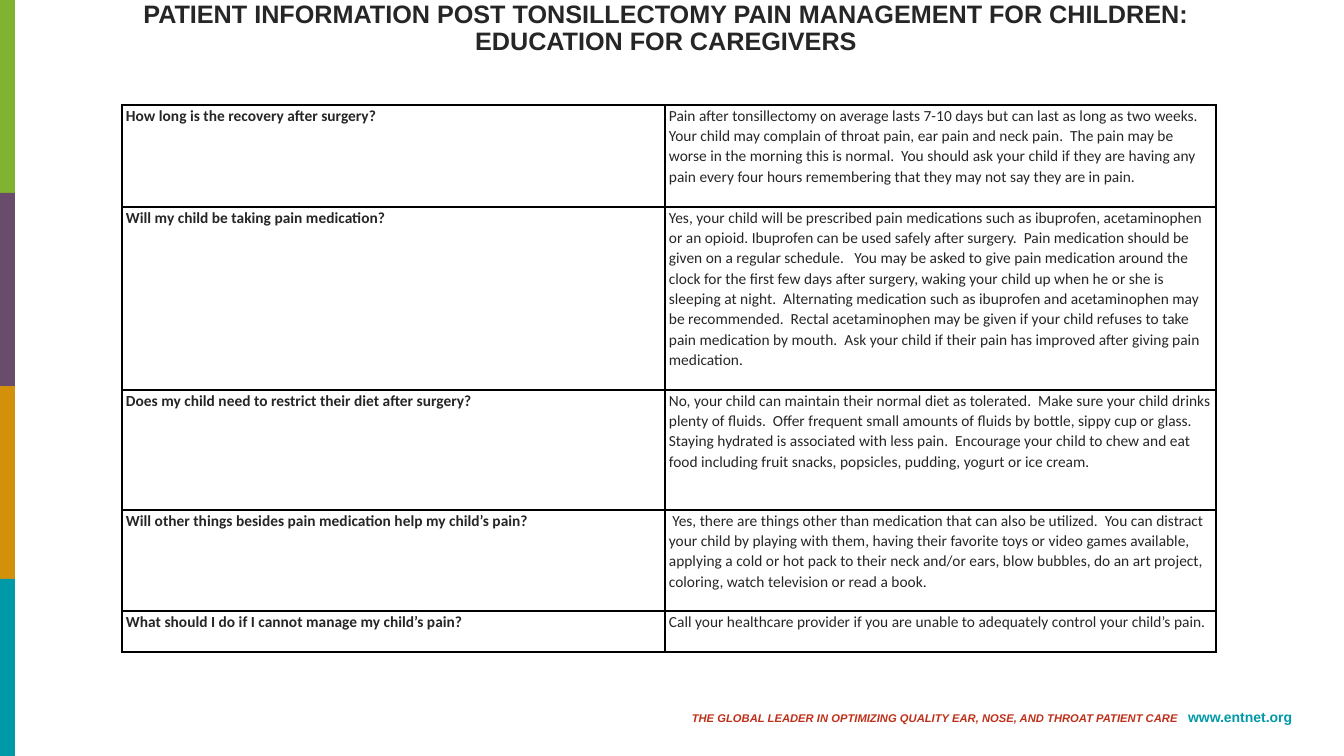
"""Build the slide on pain management after tonsillectomy."""
from dataclasses import dataclass

from lxml.etree import SubElement
from pptx import Presentation
from pptx.dml.color import RGBColor
from pptx.enum.shapes import MSO_SHAPE as Preset
from pptx.enum.text import MSO_ANCHOR as Anchor, PP_ALIGN as Align
from pptx.oxml.ns import qn
from pptx.slide import Slide
from pptx.table import _Cell as Cell
from pptx.text.text import TextFrame, _Paragraph as Paragraph, _Run as Run
from pptx.util import Emu, Pt

COLOURS = {
    "green": "80B330",
    "purple": "694C6B",
    "orange": "D3910B",
    "teal": "0099A8",
    "red": "BF301A",
    "ink": "262626",
    "border": "000000",
}
SLIDE_WIDTH, SLIDE_HEIGHT = 1344, 756
BAR_WIDTH, BAR_HEIGHT, BAR_STEP = 15, 201, 193
TABLE_LEFT, TABLE_TOP = 122, 105
COLUMN_WIDTHS = (543, 551)


@dataclass(frozen=True)
class TextStyle:
    """Format of a run."""

    font: str
    size: int
    colour: str
    bold: bool = False
    italic: bool = False


@dataclass(frozen=True)
class Topic:
    """One question row of the table."""

    height: int
    question: str
    answer: str


TITLE = TextStyle("Arial", 18, "ink", bold=True)
QUESTION = TextStyle("Calibri", 11, "ink", bold=True)
ANSWER = TextStyle("Calibri", 11, "ink")
SLOGAN = TextStyle("Arial", 8, "red", bold=True, italic=True)
ADDRESS = TextStyle("Arial", 10, "teal", bold=True)

TITLE_LINES = (
    "PATIENT INFORMATION POST TONSILLECTOMY PAIN MANAGEMENT FOR CHILDREN:",
    "EDUCATION FOR CAREGIVERS",
)
TOPICS = (
    Topic(
        102,
        "How long is the recovery after surgery?",
        "Pain after tonsillectomy on average lasts 7-10 days but can last as long as two weeks.  "
        "Your child may complain of throat pain, ear pain and neck pain.  The pain may be worse in "
        "the morning this is normal.  You should ask your child if they are having any pain every "
        "four hours remembering that they may not say they are in pain.",
    ),
    Topic(
        183,
        "Will my child be taking pain medication?",
        "Yes, your child will be prescribed pain medications such as ibuprofen, acetaminophen or an "
        "opioid. Ibuprofen can be used safely after surgery.  Pain medication should be given on a "
        "regular schedule.   You may be asked to give pain medication around the clock for the first "
        "few days after surgery, waking your child up when he or she is sleeping at night.  "
        "Alternating medication such as ibuprofen and acetaminophen may be recommended.  Rectal "
        "acetaminophen may be given if your child refuses to take pain medication by mouth.  Ask "
        "your child if their pain has improved after giving pain medication.",
    ),
    Topic(
        120,
        "Does my child need to restrict their diet after surgery?",
        "No, your child can maintain their normal diet as tolerated.  Make sure your child drinks "
        "plenty of fluids.  Offer frequent small amounts of fluids by bottle, sippy cup or glass.  "
        "Staying hydrated is associated with less pain.  Encourage your child to chew and eat food "
        "including fruit snacks, popsicles, pudding, yogurt or ice cream.",
    ),
    Topic(
        101,
        "Will other things besides pain medication help my child’s pain?",
        " Yes, there are things other than medication that can also be utilized.  You can distract "
        "your child by playing with them, having their favorite toys or video games available, "
        "applying a cold or hot pack to their neck and/or ears, blow bubbles, do an art project, "
        "coloring, watch television or read a book.",
    ),
    Topic(
        41,
        "What should I do if I cannot manage my child’s pain?",
        "Call your healthcare provider if you are unable to adequately control your child’s pain.",
    ),
)


def px(length: int) -> Emu:
    """Turn px into EMU."""
    return Emu(round(length * 914400 / 100.8))


def add_run(paragraph: Paragraph, text: str, style: TextStyle) -> Run:
    """Add a styled run."""
    run = paragraph.add_run()
    run.text = text
    formats = {
        "name": style.font,
        "size": Pt(style.size),
        "bold": style.bold,
        "italic": style.italic,
    }
    for name, value in formats.items():
        setattr(run.font, name, value)
    run.font.color.rgb = RGBColor.from_string(COLOURS[style.colour])
    return run


def add_text_frame(slide: Slide, left: int, top: int, width: int, height: int) -> TextFrame:
    """Add a wrapping text box and return its frame."""
    frame = slide.shapes.add_textbox(px(left), px(top), px(width), px(height)).text_frame
    frame.word_wrap = True
    return frame


def draw_bars(slide: Slide) -> None:
    """Draw the coloured bars on the left edge."""
    for index, colour in enumerate(("green", "purple", "orange", "teal")):
        top = index * BAR_STEP
        height = min(BAR_HEIGHT, SLIDE_HEIGHT - top)
        bar = slide.shapes.add_shape(Preset.RECTANGLE, 0, px(top), px(BAR_WIDTH), px(height))
        bar.shadow.inherit = False
        bar.fill.solid()
        bar.fill.fore_color.rgb = RGBColor.from_string(COLOURS[colour])
        bar.line.fill.background()


def draw_title(slide: Slide) -> None:
    """Draw the two-line title."""
    frame = add_text_frame(slide, 90, 0, 1159, 70)
    formats = {"margin_top": px(2), "margin_right": px(17), "vertical_anchor": Anchor.TOP}
    for name, value in formats.items():
        setattr(frame, name, value)
    paragraph = frame.paragraphs[0]
    paragraph.alignment = Align.CENTER
    paragraph.line_spacing = 0.9
    add_run(paragraph, TITLE_LINES[0], TITLE)
    paragraph.add_line_break()
    add_run(paragraph, TITLE_LINES[1], TITLE)


def draw_footer(slide: Slide) -> None:
    """Draw the slogan and the web address."""
    paragraph = add_text_frame(slide, 527, 704, 775, 27).paragraphs[0]
    paragraph.alignment = Align.RIGHT
    add_run(paragraph, "THE GLOBAL LEADER IN OPTIMIZING QUALITY EAR, NOSE, AND THROAT PATIENT CARE", SLOGAN)
    gap = add_run(paragraph, " ", SLOGAN)
    gap._r.get_or_add_rPr().set("spc", "445")
    add_run(paragraph, "www.entnet.org", ADDRESS)


def fill_cell(cell: Cell, text: str, style: TextStyle) -> None:
    """Write a bordered cell without a fill."""
    formats = {
        "margin_left": px(4),
        "margin_right": px(4),
        "margin_top": 0,
        "margin_bottom": 0,
        "vertical_anchor": Anchor.TOP,
    }
    for name, value in formats.items():
        setattr(cell, name, value)
    properties = cell._tc.get_or_add_tcPr()
    for side in ("lnL", "lnR", "lnT", "lnB"):
        line = SubElement(properties, qn(f"a:{side}"), w=str(Pt(1)))
        solid = SubElement(line, qn("a:solidFill"))
        SubElement(solid, qn("a:srgbClr"), val=COLOURS["border"])
    cell.fill.background()
    paragraph = cell.text_frame.paragraphs[0]
    paragraph.line_spacing = 1.07
    add_run(paragraph, text, style)


def draw_table(slide: Slide) -> None:
    """Draw the table of questions and answers."""
    width, height = sum(COLUMN_WIDTHS), sum(topic.height for topic in TOPICS)
    table = slide.shapes.add_table(
        len(TOPICS), 2, px(TABLE_LEFT), px(TABLE_TOP), px(width), px(height)
    ).table
    table.first_row = table.horz_banding = False
    for column, column_width in zip(table.columns, COLUMN_WIDTHS):
        column.width = px(column_width)
    for row, topic in zip(table.rows, TOPICS):
        row.height = px(topic.height)
        fill_cell(row.cells[0], topic.question, QUESTION)
        fill_cell(row.cells[1], topic.answer, ANSWER)


def main() -> None:
    """Build and save the presentation."""
    presentation = Presentation()
    presentation.slide_width = px(SLIDE_WIDTH)
    presentation.slide_height = px(SLIDE_HEIGHT)
    slide = presentation.slides.add_slide(presentation.slide_layouts[6])
    for draw in (draw_footer, draw_bars, draw_title, draw_table):
        draw(slide)
    presentation.save("out.pptx")


if __name__ == "__main__":
    main()
